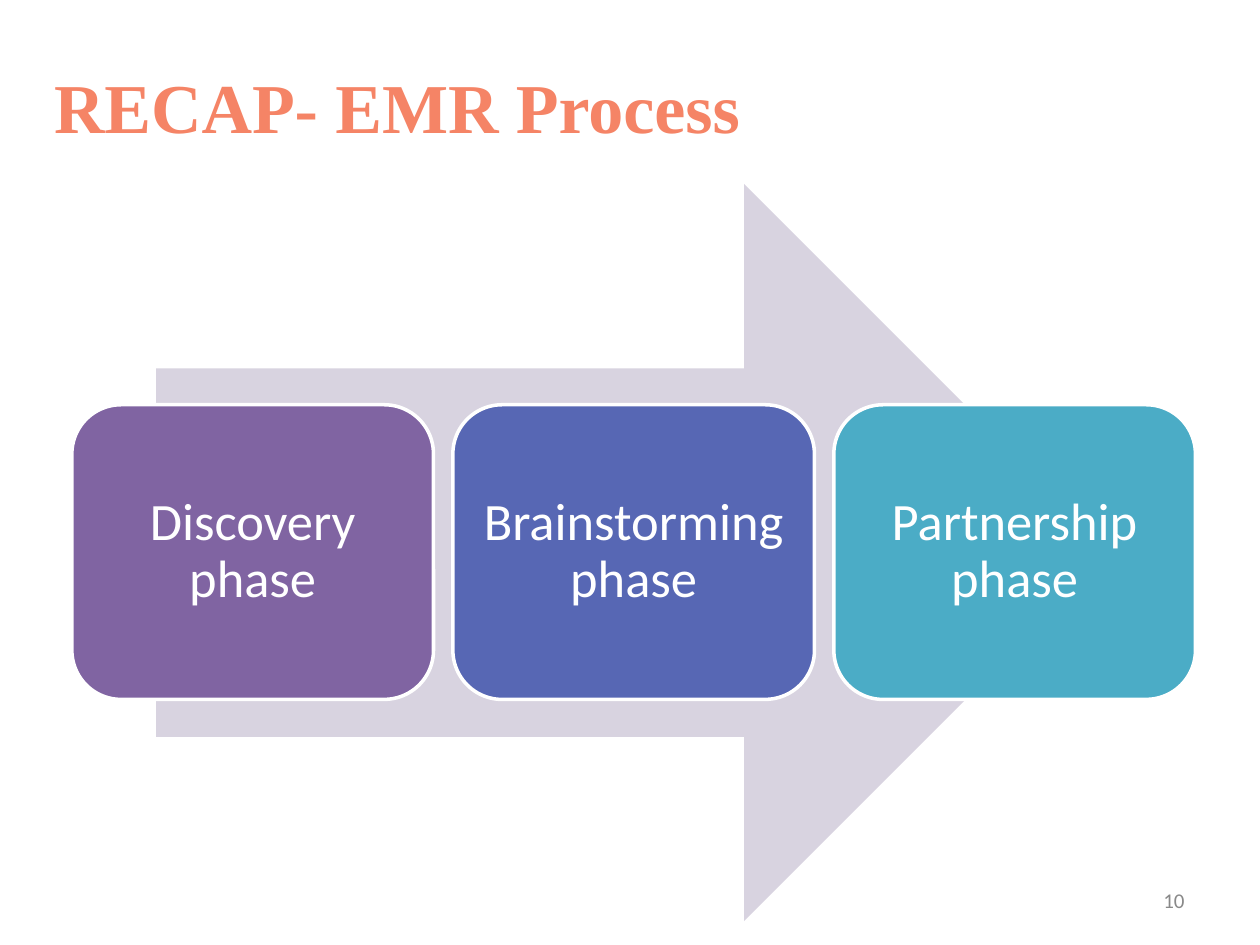
from pptx import Presentation
from pptx.dml.color import RGBColor
from pptx.enum.shapes import MSO_SHAPE
from pptx.enum.text import MSO_ANCHOR, PP_ALIGN
from pptx.util import Cm, Pt

ARROW, ROUNDED = MSO_SHAPE.RIGHT_ARROW, MSO_SHAPE.ROUNDED_RECTANGLE
MIDDLE = MSO_ANCHOR.MIDDLE
LEFT, CENTER, RIGHT = PP_ALIGN.LEFT, PP_ALIGN.CENTER, PP_ALIGN.RIGHT

COLORS = {
    "title": "F58466",
    "number": "898989",
    "arrow": "D8D3E0",
    "discovery": "8064A2",
    "brainstorming": "5767B4",
    "partnership": "4BACC6",
    "white": "FFFFFF",
}


def rgb(name):
    return RGBColor.from_string(COLORS[name])


class Deck:
    """Holds the style and the current slide."""

    body_font = "Calibri"
    title_font = "Times New Roman"

    def __init__(self, slide):
        self.s = slide

    def set_text(self, sp, text, size, color, align, font=None, bold=False):
        tf = sp.text_frame
        tf.word_wrap = True
        tf.vertical_anchor = MIDDLE
        tf.text = text
        p = tf.paragraphs[0]
        p.alignment = align
        r = p.runs[0]
        r.font.name = font or self.body_font
        r.font.size = Pt(size)
        r.font.bold = bold
        r.font.color.rgb = rgb(color)
        return p

    def text(self, box, *args, **style):
        sp = self.s.shapes.add_textbox(*map(Cm, box))
        self.set_text(sp, *args, **style)

    def shape(self, kind, box, fill):
        sp = self.s.shapes.add_shape(kind, *map(Cm, box))
        sp.shadow.inherit = False
        sp.fill.solid()
        sp.fill.fore_color.rgb = rgb(fill)
        sp.line.fill.background()
        return sp

    def phase(self, box, text, fill):
        sp = self.shape(ROUNDED, box, fill)
        sp.line.color.rgb = rgb("white")
        sp.line.width = Pt(2)
        tf = sp.text_frame
        tf.margin_left = tf.margin_right = Cm(0.3)
        tf.margin_top = tf.margin_bottom = Cm(0.3)
        p = self.set_text(sp, text, 30, "white", CENTER)
        p.line_spacing = 0.9


def main():
    prs = Presentation()
    prs.slide_width, prs.slide_height = Cm(25.4), Cm(19.05)
    deck = Deck(prs.slides.add_slide(prs.slide_layouts[6]))

    # Title and slide number
    deck.text((0.84, 0.53, 22.86, 3.18), "RECAP- EMR Process", 40, "title",
              LEFT, font=deck.title_font, bold=True)
    deck.text((18.2, 17.65, 5.93, 1.01), "10", 12, "number", RIGHT)

    # Process arrow behind the phases
    deck.shape(ARROW, (3.15, 3.71, 19.28, 14.86), "arrow")

    # Three evenly spaced phases
    left, pitch = 1.45, 7.68
    for i, name in enumerate(("Discovery", "Brainstorming", "Partnership")):
        deck.phase((left + i * pitch, 8.16, 7.29, 5.94),
                   f"{name} phase", name.lower())

    prs.save("out.pptx")


if __name__ == "__main__":
    main()
